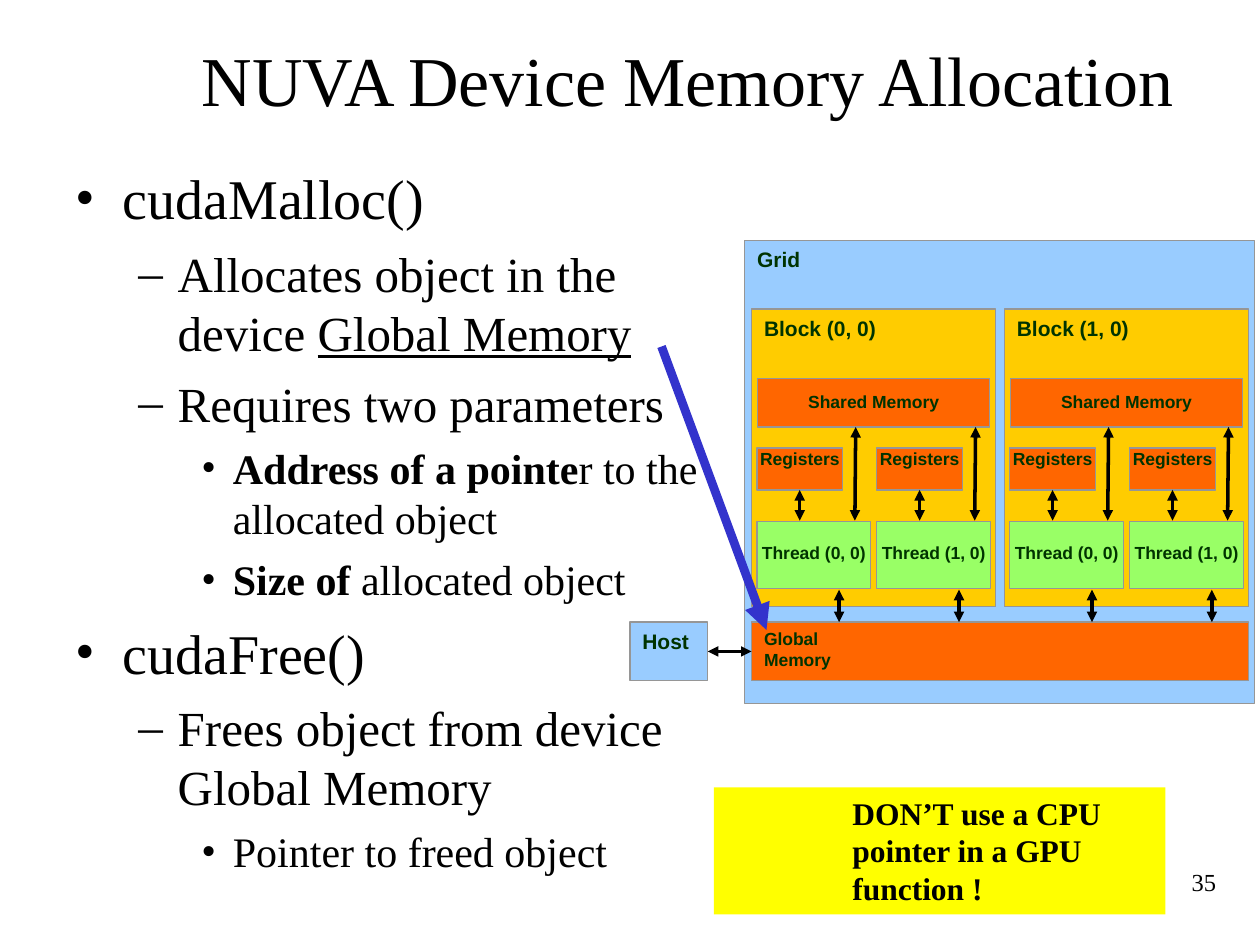
from lxml.etree import SubElement as Sub
from pptx import Presentation
from pptx.dml.color import RGBColor as Rgb
from pptx.enum.shapes import MSO_CONNECTOR as Conn, MSO_SHAPE as Geo
from pptx.enum.text import MSO_ANCHOR as Anchor, PP_ALIGN as Align
from pptx.oxml.ns import qn
from pptx.util import Pt

SERIF, SANS = "Times New Roman", "Arial"
BLACK, INK, GRAY = "000000", "003300", "969696"
SKY, RUST, GOLD, LIME = "99CCFF", "FF6600", "FFCC00", "99FF66"

# Level: (size, left indent, hanging indent, space before, bullet)
LEVELS = [(32, 27, 27, 8, "•"), (28, 58.5, 22.5, 7, "–"), (24, 90, 18, 6, "•")]

# Level, then runs of (text, style)
BULLETS = [
    (0, [("cudaMalloc()", "")]),
    (1, [("Allocates object in the device ", ""), ("Global Memory", "u")]),
    (1, [("Requires two parameters", "")]),
    (2, [("Address of a pointe", "b"), ("r to the allocated object", "")]),
    (2, [("Size of", "b"), (" allocated object", "")]),
    (0, [("cudaFree()", "")]),
    (1, [("Frees object from device Global Memory", "")]),
    (2, [("Pointer to freed object", "")]),
]


def paint(target, color):
    """Give a fill or a line fill a solid colour."""
    target.solid()
    target.fore_color.rgb = Rgb.from_string(color)


def style(run, size, face=SERIF, color=BLACK, bold=False):
    font = run.font
    font.size, font.name, font.bold = Pt(size), face, bold
    paint(font.fill, color)


def inset(frame, left=7.2, top=3.6, right=7.2, low=3.6):
    frame.margin_left, frame.margin_top = Pt(left), Pt(top)
    frame.margin_right, frame.margin_bottom = Pt(right), Pt(low)


def place(shape, x, y, w, h):
    shape.left, shape.top, shape.width, shape.height = map(Pt, (x, y, w, h))


def add_title(slide, text):
    title = slide.shapes.title
    place(title, 66, 0, 654, 90)
    frame = title.text_frame
    frame.text = text
    frame.vertical_anchor = Anchor.MIDDLE
    frame.paragraphs[0].alignment = Align.CENTER
    style(frame.paragraphs[0].runs[0], 40)


def add_list(slide):
    frame = slide.shapes.add_textbox(Pt(36), Pt(90), Pt(402), Pt(414)).text_frame
    frame.word_wrap = True
    inset(frame)
    for i, (level, runs) in enumerate(BULLETS):
        para = frame.add_paragraph() if i else frame.paragraphs[0]
        size, left, hang, gap, mark = LEVELS[level]
        para.level, para.space_before = level, Pt(gap)
        props = para._p.get_or_add_pPr()
        props.set("marL", str(Pt(left)))
        props.set("indent", str(-Pt(hang)))
        Sub(props, qn("a:buFont")).set("typeface", SERIF)
        Sub(props, qn("a:buChar")).set("char", mark)
        for text, kind in runs:
            run = para.add_run()
            run.text = text
            style(run, size, bold=kind == "b")
            run.font.underline = kind == "u"


def add_box(slide, text, x, y, w, h, fill, size=12, pad=None):
    """Add a labelled box; a given top pad centres the label."""
    box = slide.shapes.add_shape(Geo.RECTANGLE, Pt(x), Pt(y), Pt(w), Pt(h))
    box.shadow.inherit = False
    paint(box.fill, fill)
    paint(box.line.fill, GRAY)
    box.line.width = Pt(0.75)
    frame = box.text_frame
    frame.text = text
    frame.word_wrap = True
    frame.vertical_anchor = Anchor.TOP
    if pad is None:
        inset(frame)
    else:
        inset(frame, 0, pad, 0, 0)
    for para in frame.paragraphs:
        para.alignment = Align.LEFT if pad is None else Align.CENTER
        style(para.runs[0], size, SANS, INK, True)
    return box


def add_arrow(slide, x1, y1, x2, y2, color=BLACK, width=2, both=True):
    line = slide.shapes.add_connector(Conn.STRAIGHT, Pt(x1), Pt(y1), Pt(x2), Pt(y2))
    paint(line.line.fill, color)
    line.line.width = Pt(width)
    stroke = line.line._get_or_add_ln()
    for end in ("headEnd", "tailEnd") if both else ("tailEnd",):
        Sub(stroke, qn("a:" + end)).set("type", "triangle")
    Sub(line._element.spPr, qn("a:effectLst"))
    return line


def add_thread(slide, name, x):
    """Add a thread, its registers and its memory arrows."""
    add_box(slide, name, x, 298, 65, 38.5, LIME, 10, 11.5)
    regs = add_box(slide, "Registers", x, 256, 49, 24, RUST, 10, 0)
    add_arrow(slide, x + 56, 297.5, x + 56.5, 244)
    add_arrow(slide, x + 24.5, 280, x + 24.5, 297.5).begin_connect(regs, 2)
    add_arrow(slide, x + 47, 337, x + 47, 355.5)


def add_block(slide, name, x):
    add_box(slide, name, x, 176.5, 139.5, 170, GOLD)
    add_box(slide, "Shared Memory", x + 3.5, 216.5, 132.5, 27.5, RUST, 10, 7.2)
    for i in range(2):
        add_thread(slide, f"Thread ({i}, 0)", x + 3 + 68.5 * i)


def add_note(slide, text):
    note = add_box(slide, text, 408, 450, 258, 72.5, "FFFF00")
    note.line.fill.background()
    para = note.text_frame.paragraphs[0]
    para.level = 2
    para._p.get_or_add_pPr().set("marL", str(Pt(72)))
    style(para.runs[0], 18, bold=True)


def add_number(slide, text):
    frame = slide.shapes.add_textbox(Pt(552), Pt(492), Pt(150), Pt(36)).text_frame
    frame.text = text
    frame.word_wrap = True
    frame.paragraphs[0].alignment = Align.RIGHT
    style(frame.paragraphs[0].runs[0], 14)


def main():
    deck = Presentation()
    deck.slide_width, deck.slide_height = Pt(720), Pt(540)
    slide = deck.slides.add_slide(deck.slide_layouts[5])

    # Text
    add_number(slide, "35")
    add_title(slide, "NUVA Device Memory Allocation")
    add_list(slide)

    # Device grid
    add_box(slide, "Grid", 425.5, 137.5, 291.5, 264.5, SKY)
    store = add_box(slide, "Global\nMemory", 429.5, 355.5, 284, 33.5, RUST, 10)
    for i in range(2):
        add_block(slide, f"Block ({i}, 0)", 429.5 + 144.5 * i)

    # Host and its link to global memory
    host = add_box(slide, "Host", 360, 355.5, 44.5, 33.5, SKY)
    link = add_arrow(slide, 404.5, 372.25, 429.5, 372.25)
    link.begin_connect(host, 3)
    link.end_connect(store, 1)

    # Pointer from the list, and the warning
    add_arrow(slide, 378, 198, 438, 360, "3333CC", 5, False)
    add_note(slide, "DON’T use a CPU pointer in a GPU function !")
    deck.save("out.pptx")


if __name__ == "__main__":
    main()
